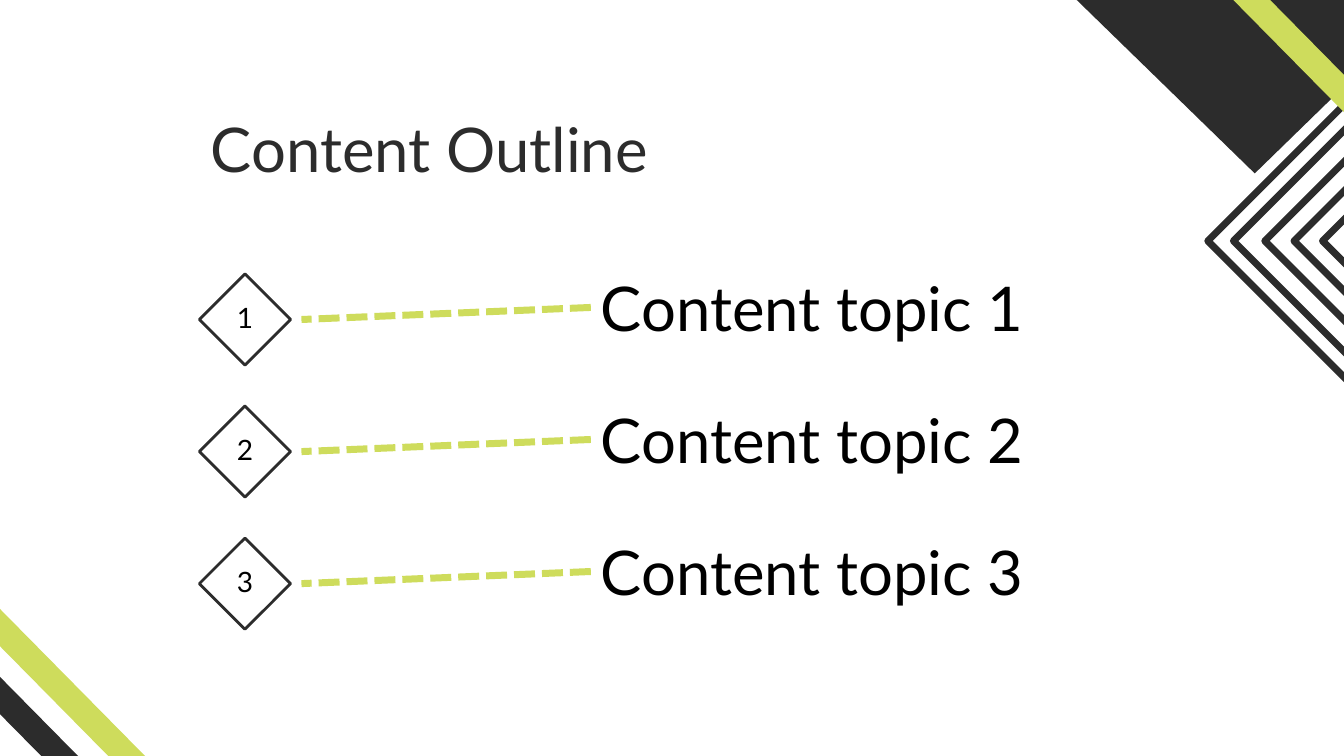
from dataclasses import dataclass

from lxml import etree
from pptx import Presentation
from pptx.dml.color import RGBColor
from pptx.enum.dml import MSO_LINE
from pptx.enum.shapes import MSO_CONNECTOR, MSO_SHAPE
from pptx.enum.text import MSO_ANCHOR, PP_ALIGN
from pptx.oxml.ns import qn
from pptx.util import Inches, Pt

RECT = MSO_SHAPE.RECTANGLE
WEDGE = MSO_SHAPE.ISOSCELES_TRIANGLE
LINE = MSO_CONNECTOR.STRAIGHT
DOTS = MSO_LINE.SQUARE_DOT
LEFT, CENTER = PP_ALIGN.LEFT, PP_ALIGN.CENTER
TOP, MIDDLE = MSO_ANCHOR.TOP, MSO_ANCHOR.MIDDLE

COLS, ROWS = 133.3, 75
CELL = Inches(0.1)


@dataclass(frozen=True)
class Theme:
    font: str = "Lato"
    dark: RGBColor = RGBColor(0x2C, 0x2C, 0x2C)
    lime: RGBColor = RGBColor(0xCE, 0xDC, 0x5C)
    ink: RGBColor = RGBColor(0, 0, 0)
    large: Pt = Pt(44)
    small: Pt = Pt(20)
    thick: Pt = Pt(5)
    thin: Pt = Pt(2)


THEME = Theme()


def cells(*sizes):
    return [round(size * CELL) for size in sizes]


def add_text(slide, box, text, size, color, align=LEFT, anchor=TOP, lead=0.9, wrap=True):
    frame = slide.shapes.add_textbox(*cells(*box)).text_frame
    frame.word_wrap = wrap
    frame.vertical_anchor = anchor
    para = frame.paragraphs[0]
    para.text = text
    para.alignment = align
    para.line_spacing = lead
    para.font.name = THEME.font
    para.font.size = size
    para.font.color.rgb = color


def add_solid(slide, kind, box, color, angle):
    shape = slide.shapes.add_shape(kind, *cells(*box))
    shape.shadow.inherit = False
    shape.fill.solid()
    shape.fill.fore_color.rgb = color
    shape.line.fill.background()
    shape.rotation = angle


def add_diamond(slide, x, y, side, width):
    box = cells(x - side / 2, y - side / 2, side, side)
    shape = slide.shapes.add_shape(RECT, *box)
    shape.shadow.inherit = False
    shape.fill.background()
    shape.line.color.rgb = THEME.dark
    shape.line.width = width
    shape.rotation = 315


def add_dots(slide, start, end):
    line = slide.shapes.add_connector(LINE, *cells(*start, *end))
    line.line.color.rgb = THEME.lime
    line.line.width = THEME.thick
    line.line.dash_style = DOTS
    etree.SubElement(line._element.spPr, qn("a:effectLst"))


def add_band(slide, x, y, color):
    add_solid(slide, RECT, (x, y, 2.6, 35.5), color, 315.4)


def draw_top(slide, box):
    x, y, w, h = box
    add_solid(slide, WEDGE, (x, y - 3.6, 42.7, 20.8), THEME.dark, 180)
    for side in (22.5, 18.9, 14.5, 10.4, 6.4):
        add_diamond(slide, x + w + 2.4, y + h - 14.1, side, THEME.thick)
    add_band(slide, x + w - 3.5, y - 10.7, THEME.lime)


def draw_foot(slide, box):
    x, y, w, h = box
    add_band(slide, x + 5.1, y - 9, THEME.lime)
    add_band(slide, x + 2.3, y - 5.1, THEME.dark)


def draw_topic(slide, box, number):
    x, y, w, h = box
    mid = y + 4.6
    add_diamond(slide, x + 4.6, mid, 6.4, THEME.thin)
    add_dots(slide, (x + 38.9, mid - 1.2), (x + 10.2, mid))
    add_text(slide, (x + 2.8, mid - 2.4, 3.6, 4.4), str(number), THEME.small,
             THEME.ink, CENTER, lead=1, wrap=False)
    add_text(slide, (x + 38.9, y, w - 38.9, 6.7), f"Content topic {number}",
             THEME.large, THEME.ink)


def draw_list(slide, box, count):
    x, y, w, h = box
    step = h / count
    for row in range(count):
        draw_topic(slide, (x, y + row * step, w, step), row + 1)


def main():
    deck = Presentation()
    deck.slide_width, deck.slide_height = cells(COLS, ROWS)
    slide = deck.slides.add_slide(deck.slide_layouts[6])
    add_text(slide, (17, 10.1, 51.2, 10), "Content Outline", THEME.large,
             THEME.dark, CENTER, MIDDLE)
    draw_top(slide, (103.1, 0, COLS - 103.1, 38))
    draw_foot(slide, (0, 60, 15, ROWS - 60))
    draw_list(slide, (19.7, 27.1, 102.7, 39.3), 3)
    deck.save("out.pptx")


if __name__ == "__main__":
    main()
